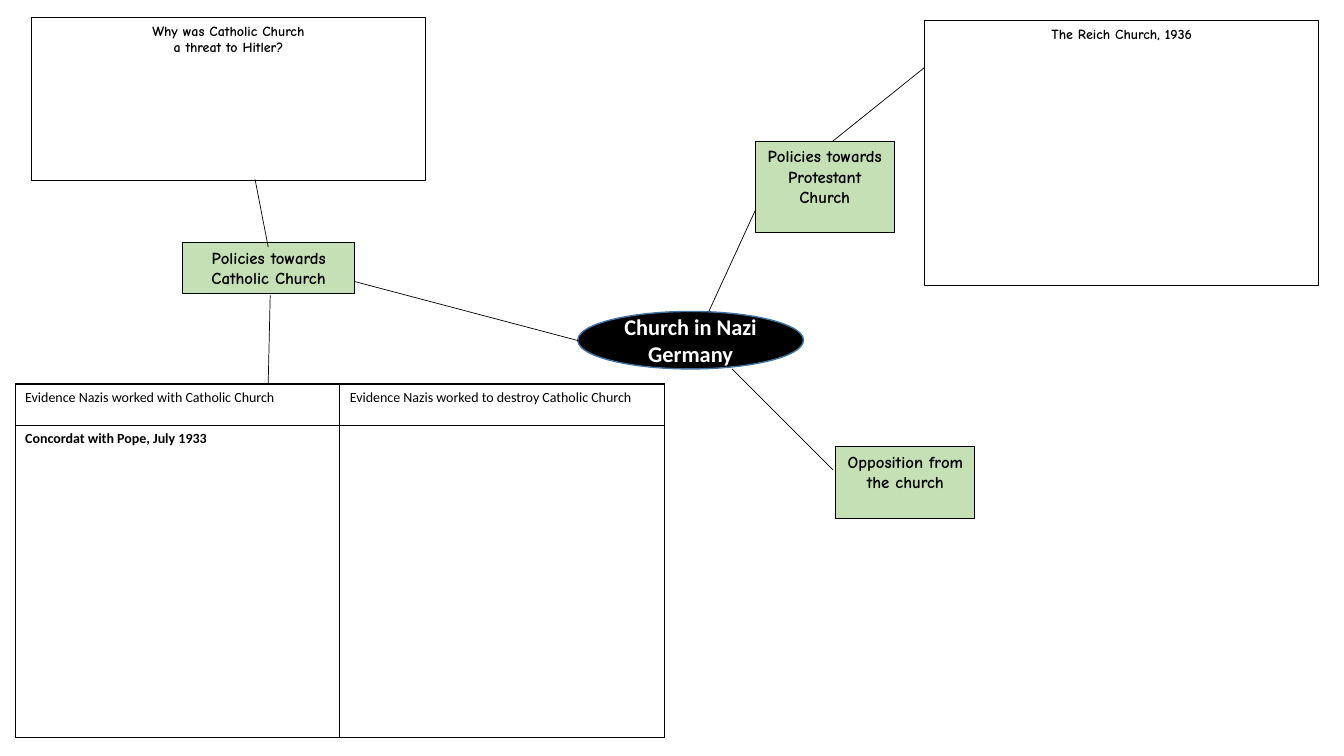
from pptx import Presentation
from pptx.dml.color import RGBColor
from pptx.enum.shapes import MSO_CONNECTOR, MSO_SHAPE
from pptx.enum.text import MSO_ANCHOR, PP_ALIGN
from pptx.oxml.ns import qn
from pptx.util import Inches, Pt
from lxml.etree import SubElement

COLORS = {
    "black": "000000",
    "white": "FFFFFF",
    "green": "C5E0B4",
    "blue": "43739E",
}


def rgb(name):
    return RGBColor.from_string(COLORS[name])


def format_runs(tf, size, font, color="black", bold=False, align=None):
    for p in tf.paragraphs:
        p.alignment = align
        for r in p.runs:
            r.font.size = Pt(size)
            r.font.name = font
            r.font.bold = bold
            r.font.color.rgb = rgb(color)


def add_node(slide, kind, box, text, fill, line, line_width):
    sp = slide.shapes.add_shape(kind, *map(Inches, box))
    sp.shadow.inherit = False
    if fill:
        sp.fill.solid()
        sp.fill.fore_color.rgb = rgb(fill)
    else:
        sp.fill.background()
    sp.line.color.rgb = rgb(line)
    sp.line.width = Pt(line_width)
    tf = sp.text_frame
    tf.word_wrap = True
    tf.text = text
    return tf


def add_topic(slide, box, text):
    tf = add_node(slide, MSO_SHAPE.OVAL, box, text, "black", "blue", 1)
    tf.vertical_anchor = MSO_ANCHOR.MIDDLE
    format_runs(tf, 16, "Calibri", "white", True, PP_ALIGN.CENTER)


def add_box(slide, box, text, size, fill=None):
    tf = add_node(slide, MSO_SHAPE.RECTANGLE, box, text, fill, "black", 0.75)
    tf.vertical_anchor = MSO_ANCHOR.TOP
    format_runs(tf, size, "Comic Neue", bold=True, align=PP_ALIGN.CENTER)


def add_link(slide, start, end):
    cx = slide.shapes.add_connector(
        MSO_CONNECTOR.STRAIGHT, *map(Inches, start + end))
    cx.line.color.rgb = rgb("black")
    cx.line.width = Pt(0.5)
    SubElement(cx._element.spPr, qn("a:effectLst"))


def set_borders(cell, width):
    tcPr = cell._tc.get_or_add_tcPr()
    for i, side in enumerate(("lnL", "lnR", "lnT", "lnB")):
        ln = tcPr.makeelement(qn(f"a:{side}"), {"w": str(Pt(width))})
        fill = SubElement(ln, qn("a:solidFill"))
        SubElement(fill, qn("a:srgbClr"), val=COLORS["black"])
        tcPr.insert(i, ln)


def add_evidence_table(slide, left, top, col_width, row_heights, rows):
    frame = slide.shapes.add_table(
        len(rows), len(rows[0]), Inches(left), Inches(top),
        Inches(col_width * len(rows[0])), Inches(sum(row_heights)))
    table = frame.table
    table.first_row = table.horz_banding = False
    for col in table.columns:
        col.width = Inches(col_width)
    for i, (texts, height) in enumerate(zip(rows, row_heights)):
        table.rows[i].height = Inches(height)
        for j, text in enumerate(texts):
            cell = table.cell(i, j)
            cell.fill.background()
            set_borders(cell, 1)
            cell.text = text
            format_runs(cell.text_frame, 10, "Calibri", bold=i > 0)


def main():
    prs = Presentation()
    prs.slide_width, prs.slide_height = Inches(13.33), Inches(7.5)
    slide = prs.slides.add_slide(prs.slide_layouts[6])

    # Central topic
    add_topic(slide, (5.73, 3.09, 2.24, 0.57), "Church in Nazi Germany")

    # Links between the topic, its branches and their details
    for start, end in [
        ((6.04, 3.46), (3.24, 2.72)),
        ((7.49, 2.09), (7.03, 3.09)),
        ((8.26, 4.66), (7.26, 3.66)),
        ((2.66, 3.81), (2.68, 2.93)),
        ((8.26, 1.4), (9.17, 0.67)),
    ]:
        add_link(slide, start, end)

    # Branches
    for box, text in [
        ((7.49, 1.4, 1.38, 0.91), "Policies towards Protestant Church"),
        ((1.81, 2.41, 1.71, 0.5), "Policies towards Catholic Church"),
        ((8.29, 4.43, 1.38, 0.71), "Opposition from the church"),
    ]:
        add_box(slide, box, text, 12, "green")
    add_link(slide, (2.66, 2.45), (2.53, 1.78))  # runs over its branch

    # Detail boxes
    add_box(slide, (0.31, 0.17, 3.91, 1.62),
            "Why was Catholic Church\na threat to Hitler?", 10)
    add_box(slide, (9.17, 0.2, 3.91, 2.63), "The Reich Church, 1936", 10)

    # Evidence table
    add_evidence_table(slide, 0.15, 3.81, 3.22, (0.41, 3.1), [
        ("Evidence Nazis worked with Catholic Church",
         "Evidence Nazis worked to destroy Catholic Church"),
        ("Concordat with Pope, July 1933", ""),
    ])

    prs.save("out.pptx")


if __name__ == "__main__":
    main()
